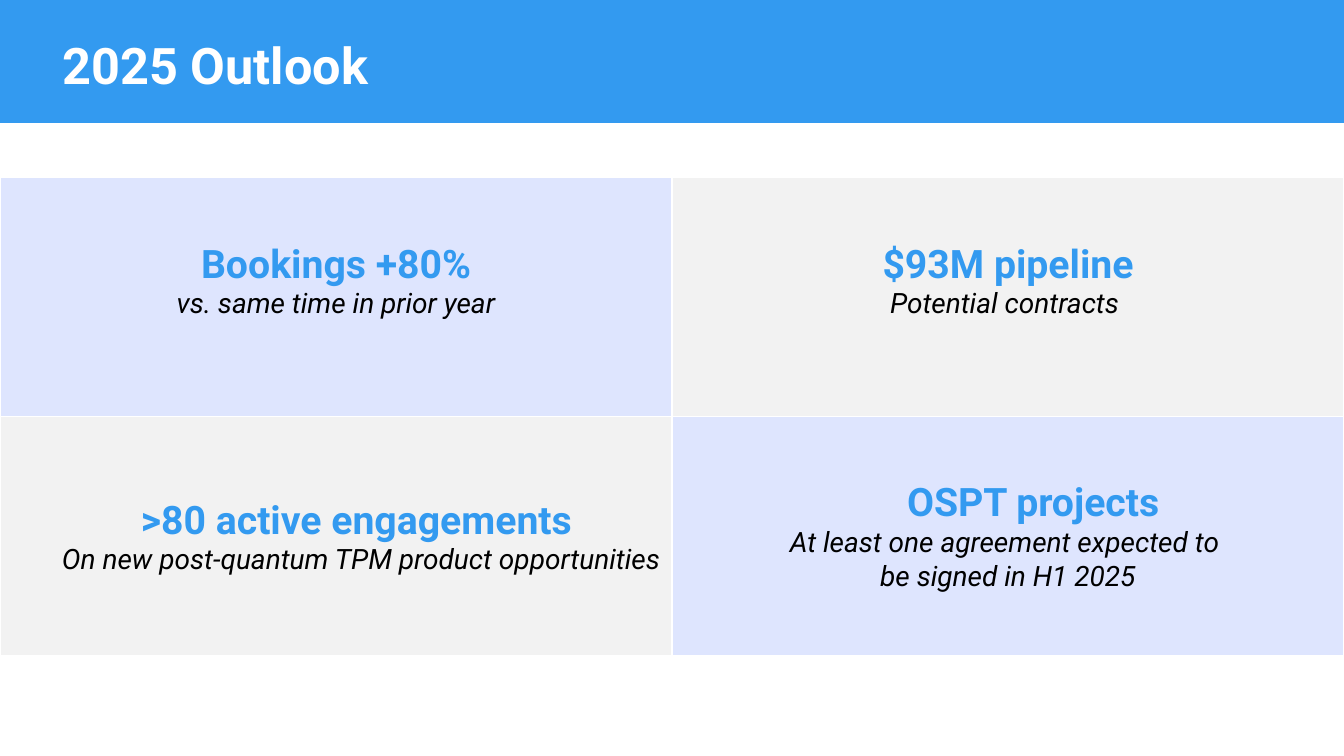
"""Build the 2025 Outlook slide."""
import pptx
import pptx.dml.color
import pptx.enum.shapes
import pptx.enum.text
import pptx.util
from lxml import etree
from pptx.oxml.ns import qn
from pptx.util import Inches

COLORS = {
    "blue": "339AF0",
    "lavender": "DEE5FE",
    "gray": "F2F2F2",
    "white": "FFFFFF",
    "black": "000000",
}
SLIDE_WIDTH = 13.33
COLUMN_WIDTH = SLIDE_WIDTH / 2
ROW_HEIGHT = 2.37
OUTLOOKS = [
    (0, 2.32, 0.91, "Bookings +80%", ["vs. same time in prior year"], 0, 0),
    (1, 2.32, 0.91, "$93M pipeline", ["Potential contracts "], 0, 0),
    (0, 4.86, 0.91, ">80 active engagements ",
     ["On new post-quantum TPM product opportunities"], 0.5, 0.5),
    (1, 4.69, 1.25, "OSPT projects",
     ["At least one agreement expected to ", "be signed in H1 2025"], 0.5, 0),
]


def rgb(name):
    return pptx.dml.color.RGBColor.from_string(COLORS[name])


def add_text(paragraph, text, size, color, bold=False, italic=False, centered=False, indent=0):
    if indent:
        paragraph._p.get_or_add_pPr().set("marL", str(Inches(indent)))
    if centered:
        paragraph.alignment = pptx.enum.text.PP_ALIGN.CENTER
    run = paragraph.add_run()
    run.text = text
    run.font.name = "Roboto"
    run.font.size = pptx.util.Pt(size)
    run.font.bold = bold
    run.font.italic = italic
    run.font.color.rgb = rgb(color)


def add_text_frame(slide, left, top, width, height):
    box = slide.shapes.add_textbox(Inches(left), Inches(top), Inches(width), Inches(height))
    box.text_frame.word_wrap = True
    return box.text_frame


def add_header(slide, title):
    band = slide.shapes.add_shape(
        pptx.enum.shapes.MSO_SHAPE.RECTANGLE, 0, 0, Inches(SLIDE_WIDTH), Inches(1.22))
    band.shadow.inherit = False
    band.fill.solid()
    band.fill.fore_color.rgb = rgb("blue")
    band.line.fill.background()
    frame = add_text_frame(slide, 0.62, 0.17, 11.75, 0.93)
    frame.margin_left = frame.margin_right = frame.margin_top = frame.margin_bottom = 0
    frame.vertical_anchor = pptx.enum.text.MSO_ANCHOR.MIDDLE
    add_text(frame.paragraphs[0], title, size=36, color="white", bold=True)


def format_cell(cell, color):
    properties = cell._tc.get_or_add_tcPr()
    for side in ("lnL", "lnR", "lnT", "lnB"):
        border = etree.SubElement(properties, qn(f"a:{side}"), w=str(pptx.util.Pt(1)))
        fill = etree.SubElement(border, qn("a:solidFill"))
        etree.SubElement(fill, qn("a:srgbClr"), val=COLORS["white"])
    cell.fill.solid()
    cell.fill.fore_color.rgb = rgb(color)


def add_checkerboard(slide):
    table = slide.shapes.add_table(
        2, 2, 0, Inches(1.76), Inches(SLIDE_WIDTH), Inches(2 * ROW_HEIGHT)).table
    table.first_row = False
    table.horz_banding = False
    for row_index, row in enumerate(table.rows):
        row.height = Inches(ROW_HEIGHT)
        for column_index, cell in enumerate(row.cells):
            format_cell(cell, ("lavender", "gray")[(row_index + column_index) % 2])


def add_outlook(slide, column, top, height, headline, details, headline_indent, detail_indent):
    frame = add_text_frame(slide, column * COLUMN_WIDTH, top, COLUMN_WIDTH, height)
    add_text(frame.paragraphs[0], headline, size=28, color="blue", bold=True,
             centered=True, indent=headline_indent)
    for detail in details:
        add_text(frame.add_paragraph(), detail, size=20, color="black", italic=True,
                 centered=True, indent=detail_indent)


def main():
    presentation = pptx.Presentation()
    presentation.slide_width = Inches(SLIDE_WIDTH)
    presentation.slide_height = Inches(7.5)
    slide = presentation.slides.add_slide(presentation.slide_layouts[6])
    add_header(slide, "2025 Outlook")
    add_checkerboard(slide)
    for outlook in OUTLOOKS:
        add_outlook(slide, *outlook)
    presentation.save("out.pptx")


if __name__ == "__main__":
    main()
